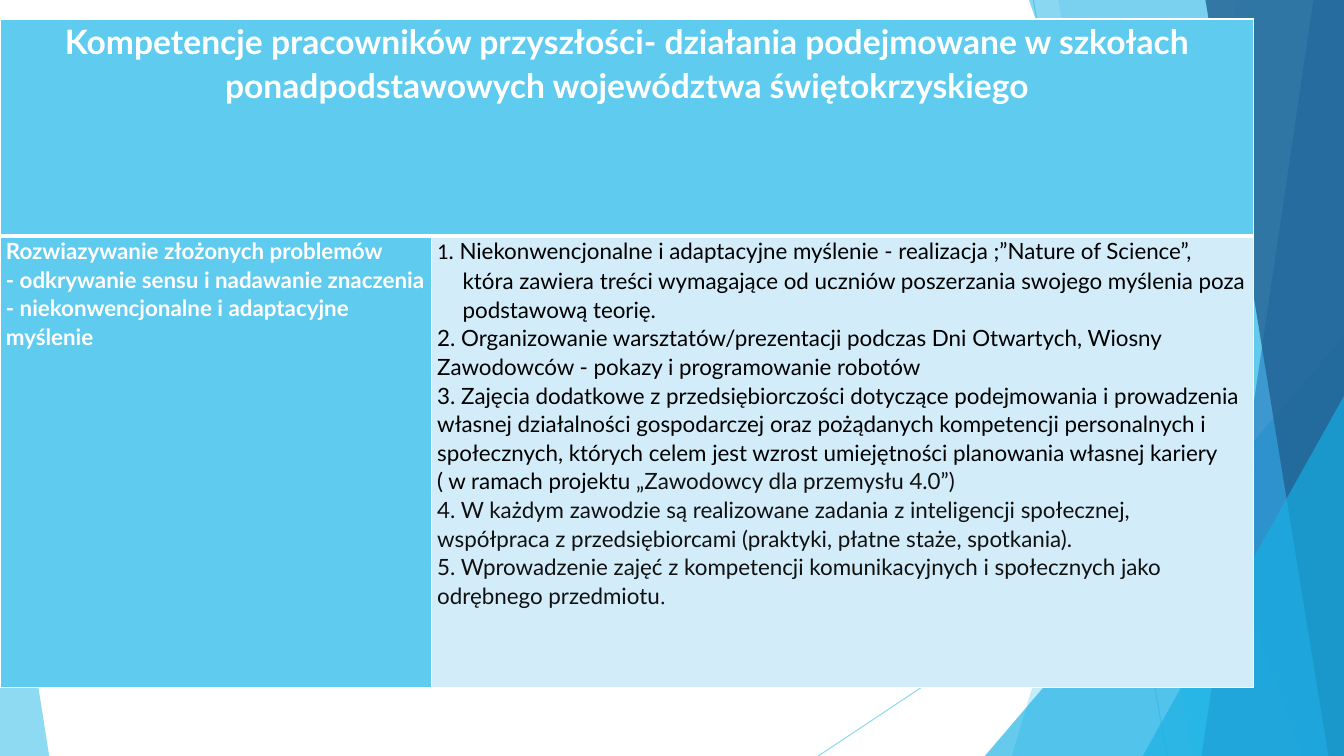
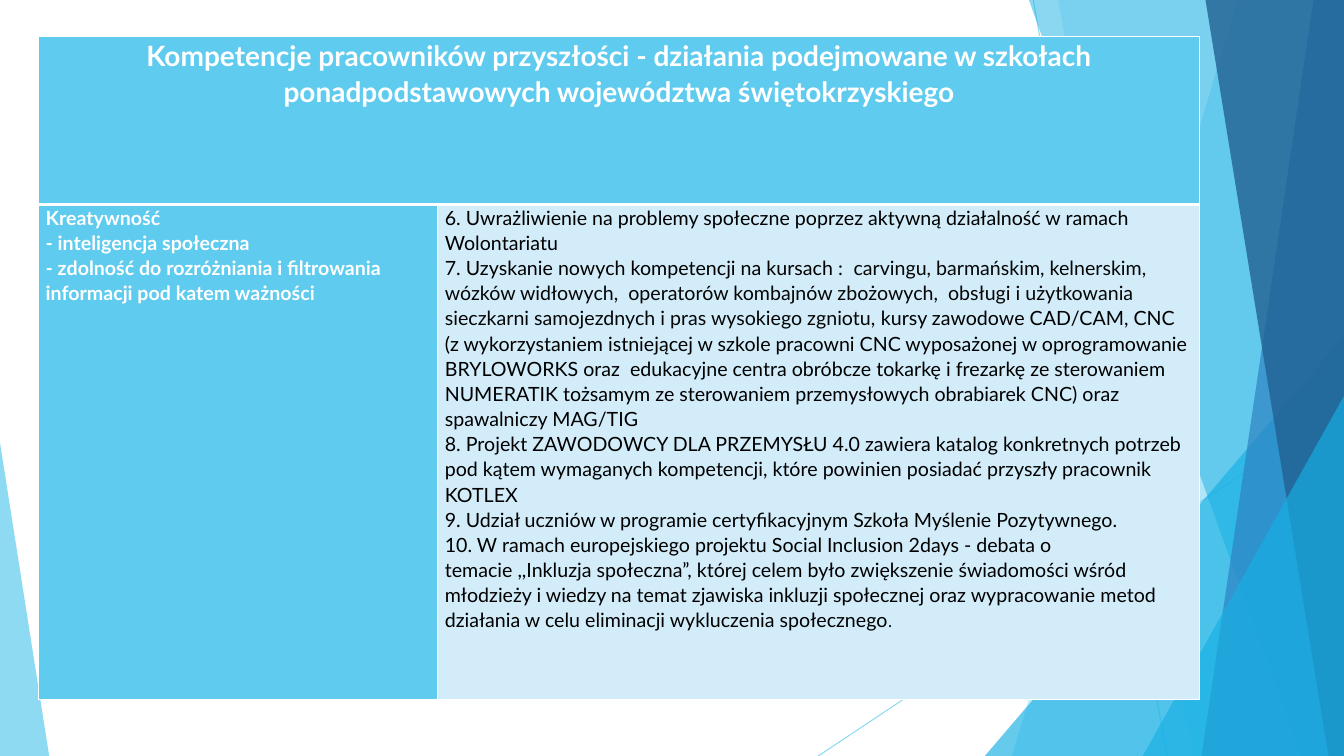
from dataclasses import dataclass
from typing import Optional

from lxml.etree import SubElement
from pptx import Presentation
from pptx.dml.color import RGBColor
from pptx.enum.shapes import MSO_CONNECTOR as Connector, MSO_SHAPE as Preset
from pptx.enum.text import PP_ALIGN as Align
from pptx.oxml.ns import qn
from pptx.util import Cm, Pt

WIDTH, HEIGHT = 33.87, 19.05  # centimetres
WHITE, BLACK = "FFFFFF", "000000"
SKY, CYAN, BLUE, NAVY, PALE = "5FCBEF", "17B0E4", "2E83C3", "226292", "D2ECF9"
INK, SOFT_INK = "050505", "111111"
FONT = "Lato"
LINE_SPACING = 1.07
HANGING = Cm(0.64)


@dataclass(frozen=True)
class Ray:
    start: tuple[float, float]
    end: tuple[float, float]


@dataclass(frozen=True)
class Band:
    """A facet that reaches from a slanted left edge to the slide's right edge."""
    top_x: float
    bottom_x: float
    color: str
    opacity: int


@dataclass(frozen=True)
class Corner:
    """A right triangle standing on the slide's bottom edge."""
    left: float
    top: float
    width: float
    apex: float
    color: str
    opacity: int


@dataclass(frozen=True)
class Run:
    text: str
    color: str = BLACK
    font: Optional[str] = None
    size: Optional[float] = None


@dataclass(frozen=True)
class Item:
    runs: tuple[Run, ...]
    hanging: bool = False


@dataclass(frozen=True)
class CompetenceTable:
    left: float
    top: float
    columns: tuple[float, float]
    rows: tuple[float, float]
    margin: float
    title_size: float
    body_size: float
    title: str
    competences: tuple[str, ...]
    activities: tuple[Item, ...]


BACKDROP = (
    Ray((26.04, 0), (29.41, HEIGHT)),
    Ray((WIDTH, 10.24), (20.62, HEIGHT)),
    Band(31.19, 25.5, SKY, 36),
    Band(26.67, 30.05, SKY, 20),
    Corner(24.82, 8.46, 9.05, 1, CYAN, 66),
    Band(25.93, 32.79, CYAN, 50),
    Band(33.1, 30.28, BLUE, 70),
    Band(30.38, 33.48, NAVY, 80),
    Corner(28.8, 9.98, 5.07, 1, CYAN, 66),
    Corner(0, 11.15, 1.24, 0, SKY, 70),
)


def plain(text: str, color: str = BLACK) -> Item:
    return Item((Run(text, color),))


TABLES = (
    CompetenceTable(
        0, 0.48, (10.87, 20.73), (5.46, 11.38), 0.15, 24, 16,
        "Kompetencje pracowników przyszłości- działania podejmowane w szkołach "
        "ponadpodstawowych województwa świętokrzyskiego",
        (
            "Rozwiazywanie złożonych problemów",
            "- odkrywanie sensu i nadawanie znaczenia",
            "- niekonwencjonalne i adaptacyjne myślenie",
        ),
        (
            Item((
                Run("1", font="Calibri"),
                Run(". Niekonwencjonalne i adaptacyjne myślenie - realizacja "
                    ";”Nature of Science”, która zawiera treści wymagające od uczniów "
                    "poszerzania swojego myślenia poza podstawową teorię."),
            ), hanging=True),
            plain("2. Organizowanie warsztatów/prezentacji podczas Dni Otwartych, "
                  "Wiosny Zawodowców - pokazy i programowanie robotów"),
            Item((
                Run("3. Zajęcia dodatkowe z przedsiębiorczości dotyczące podejmowania "
                    "i prowadzenia własnej działalności gospodarczej oraz pożądanych "
                    "kompetencji personalnych i społecznych, których celem jest wzrost "
                    "umiejętności planowania własnej kariery ( w ramach projektu "),
                Run("„Zawodowcy dla przemysłu 4.0”)", SOFT_INK),
            )),
            plain("4. W każdym zawodzie są realizowane zadania z inteligencji "
                  "społecznej, współpraca z przedsiębiorcami (praktyki, płatne staże, "
                  "spotkania).", SOFT_INK),
            Item((
                Run("5. Wprowadzenie zajęć z kompetencji komunikacyjnych i społecznych "
                    "jako odrębnego przedmiotu", SOFT_INK),
                Run(".", SOFT_INK, font="Times New Roman"),
            )),
        ),
    ),
    CompetenceTable(
        0.97, 0.91, (10.06, 19.2), (4.24, 12.47), 0.18, 20, 14,
        "Kompetencje pracowników przyszłości - działania podejmowane w szkołach "
        "ponadpodstawowych województwa świętokrzyskiego",
        (
            "Kreatywność",
            "- inteligencja społeczna",
            "- zdolność do rozróżniania i filtrowania informacji pod katem ważności",
        ),
        (
            plain("6. Uwrażliwienie na problemy społeczne poprzez aktywną działalność "
                  "w ramach Wolontariatu"),
            Item((
                Run("7. Uzyskanie nowych kompetencji na kursach :  "),
                Run("carvingu, barmańskim, kelnerskim, wózków widłowych,  operatorów "
                    "kombajnów zbożowych,  obsługi i użytkowania sieczkarni "
                    "samojezdnych i pras wysokiego zgniotu, ", INK),
                Run("kursy zawodowe CAD/CAM, CNC (z wykorzystaniem istniejącej w szkole "
                    "pracowni CNC wyposażonej w oprogramowanie BRYLOWORKS oraz  "
                    "edukacyjne centra obróbcze tokarkę i frezarkę ze sterowaniem "
                    "NUMERATIK tożsamym ze sterowaniem przemysłowych obrabiarek CNC) "
                    "oraz spawalniczy MAG/TIG"),
            )),
            plain("8. Projekt ZAWODOWCY DLA PRZEMYSŁU 4.0 zawiera katalog konkretnych "
                  "potrzeb pod kątem wymaganych kompetencji, które powinien posiadać "
                  "przyszły pracownik KOTLEX"),
            plain("9. Udział uczniów w programie certyfikacyjnym Szkoła Myślenie "
                  "Pozytywnego."),
            Item((
                Run("10. W ramach europejskiego projektu Social Inclusion 2days - debata "
                    "o temacie ,,Inkluzja społeczna”, której celem było zwiększenie "
                    "świadomości wśród młodzieży i wiedzy na temat zjawiska inkluzji "
                    "społecznej oraz wypracowanie metod działania w celu eliminacji "
                    "wykluczenia społecznego"),
                Run(".", size=12),
            )),
        ),
    ),
)


def rgb(color: str) -> RGBColor:
    return RGBColor.from_string(color)


def set_opacity(shape, percent: int) -> None:
    for color in shape.element.spPr.iter(qn("a:srgbClr")):
        SubElement(color, qn("a:alpha"), val=str(percent * 1000))


def draw_ray(slide, ray: Ray):
    line = slide.shapes.add_connector(
        Connector.STRAIGHT, *(Cm(value) for value in ray.start + ray.end))
    line.line.color.rgb = rgb(SKY)
    line.line.width = Pt(0.75)
    SubElement(line.element.spPr, qn("a:effectLst"))
    set_opacity(line, 70)
    return line


def draw_facet(slide, facet: Band | Corner):
    if isinstance(facet, Band):
        builder = slide.shapes.build_freeform(Cm(facet.top_x), 0)
        outline = ((WIDTH, 0), (WIDTH, HEIGHT), (facet.bottom_x, HEIGHT))
        builder.add_line_segments([(Cm(x), Cm(y)) for x, y in outline])
        shape = builder.convert_to_shape()
    else:
        shape = slide.shapes.add_shape(
            Preset.ISOSCELES_TRIANGLE, Cm(facet.left), Cm(facet.top),
            Cm(facet.width), Cm(HEIGHT - facet.top))
        shape.adjustments[0] = facet.apex
    shape.shadow.inherit = False
    shape.fill.solid()
    shape.fill.fore_color.rgb = rgb(facet.color)
    shape.line.fill.background()
    set_opacity(shape, facet.opacity)
    return shape


def move_backdrop_to_layout(slide, layout) -> None:
    """Draw the backdrop on the slide, then hand it to the layout all slides share."""
    for part in BACKDROP:
        draw = draw_ray if isinstance(part, Ray) else draw_facet
        layout.shapes.element.append(draw(slide, part).element)


def style_cell(cell, color: str, margin: float, top: float, bottom: float) -> None:
    """Set margins, white borders (widths in points) and fill."""
    cell.margin_left = cell.margin_right = Cm(margin)
    cell.margin_top = cell.margin_bottom = 0
    properties = cell._tc.get_or_add_tcPr()
    for side, width in (("L", 1), ("R", 1), ("T", top), ("B", bottom)):
        border = SubElement(properties, qn(f"a:ln{side}"), w=str(Pt(width)))
        fill = SubElement(border, qn("a:solidFill"))
        SubElement(fill, qn("a:srgbClr"), val=WHITE)
    cell.fill.solid()
    cell.fill.fore_color.rgb = rgb(color)


def write_items(cell, items: tuple[Item, ...], size: float, bold: bool,
                align: Align = Align.LEFT) -> None:
    frame = cell.text_frame
    for index, item in enumerate(items):
        paragraph = frame.add_paragraph() if index else frame.paragraphs[0]
        paragraph.alignment = align
        paragraph.line_spacing = LINE_SPACING
        paragraph.font.name = FONT
        paragraph.font.size = Pt(size)
        paragraph.font.bold = bold
        if item.hanging:
            properties = paragraph._p.get_or_add_pPr()
            properties.set("marL", str(HANGING))
            properties.set("indent", str(-HANGING))
        for part in item.runs:
            run = paragraph.add_run()
            run.text = part.text
            run.font.color.rgb = rgb(part.color)
            if part.font:
                run.font.name = part.font
            if part.size:
                run.font.size = Pt(part.size)


def draw_table(slide, content: CompetenceTable) -> None:
    table = slide.shapes.add_table(
        2, 2, Cm(content.left), Cm(content.top),
        Cm(sum(content.columns)), Cm(sum(content.rows))).table
    table.first_row = table.horz_banding = False
    for column, width in zip(table.columns, content.columns):
        column.width = Cm(width)
    for row, height in zip(table.rows, content.rows):
        row.height = Cm(height)

    title, title_rest = table.rows[0].cells
    competences, activities = table.rows[1].cells
    title.merge(title_rest)
    for cell in (title, title_rest):
        style_cell(cell, SKY, content.margin, top=1, bottom=3)
    for cell, color in ((competences, SKY), (activities, PALE)):
        style_cell(cell, color, content.margin, top=3, bottom=1)

    write_items(title, (plain(content.title, WHITE),), content.title_size, True,
                Align.CENTER)
    write_items(competences, tuple(plain(text, WHITE) for text in content.competences),
                content.body_size, True)
    write_items(activities, content.activities, content.body_size, False)


def main() -> None:
    presentation = Presentation()
    presentation.slide_width, presentation.slide_height = Cm(WIDTH), Cm(HEIGHT)
    blank = presentation.slide_layouts[6]
    slides = [presentation.slides.add_slide(blank) for _ in TABLES]
    move_backdrop_to_layout(slides[0], blank)
    for slide, content in zip(slides, TABLES):
        draw_table(slide, content)
    presentation.save("out.pptx")


if __name__ == "__main__":
    main()
